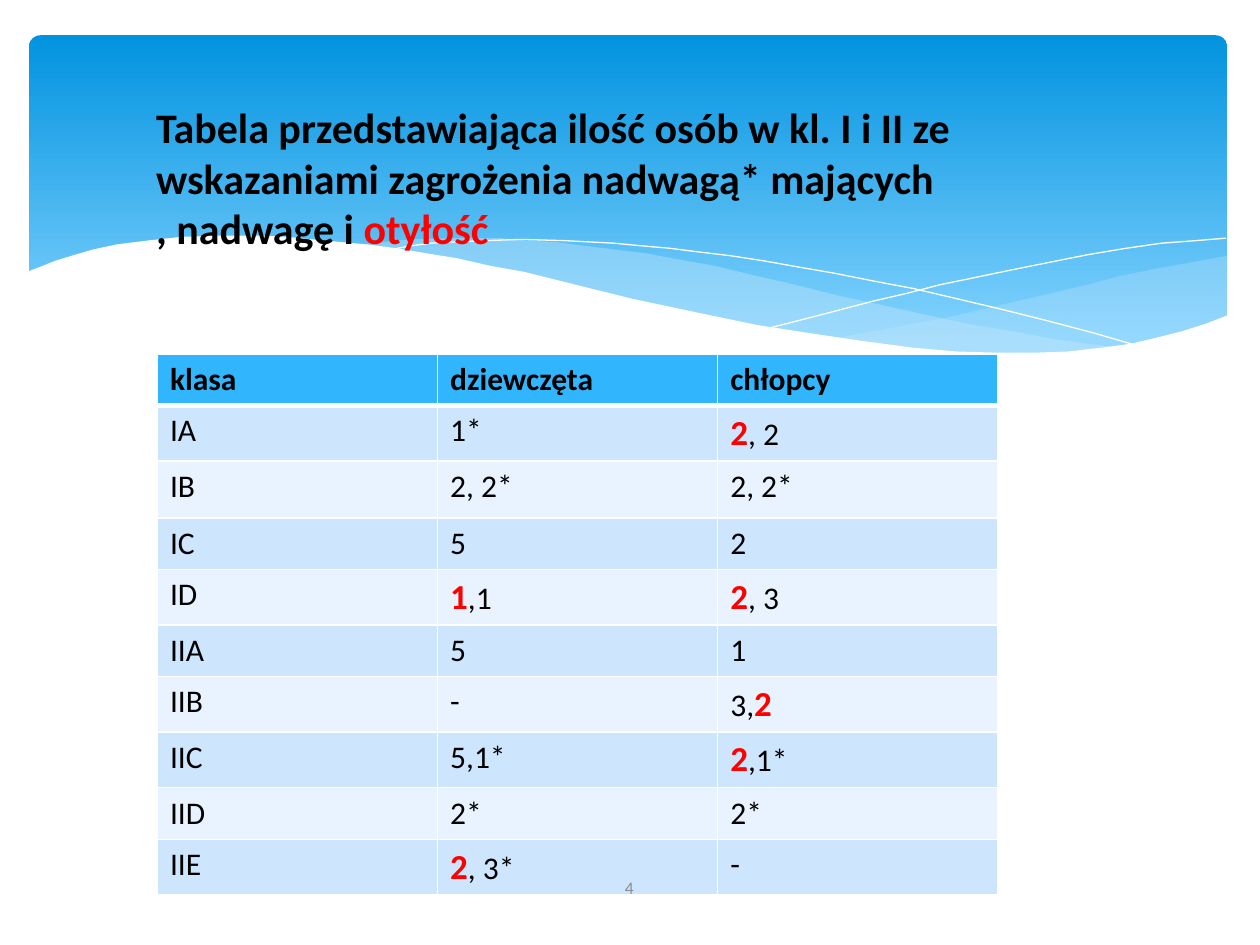
from lxml import etree
from pptx import Presentation
from pptx import util as u
from pptx.dml.color import RGBColor
from pptx.enum import shapes, text
from pptx.oxml.ns import qn

BLACK = RGBColor(0x00, 0x00, 0x00)
WHITE = RGBColor(0xFF, 0xFF, 0xFF)
RED = RGBColor(0xFF, 0x00, 0x00)
GREY = RGBColor(0x8C, 0x8C, 0x8C)
SKY_TOP = RGBColor(0x02, 0x93, 0xE0)
SKY_BOTTOM = RGBColor(0x83, 0xD3, 0xFE)
WAVE = RGBColor(0xC6, 0xE7, 0xFC)
HEADER = RGBColor(0x31, 0xB6, 0xFD)
BANDS = (RGBColor(0xCE, 0xE5, 0xFE), RGBColor(0xE8, 0xF3, 0xFF))
FONT = "Calibri"

RIGHT_WAVE = [
    (9.74, 2.03), (9.47, 2.08), (9.19, 2.13), (8.89, 2.19), (8.59, 2.27),
    (8.03, 2.4), (7.52, 2.52), (7.04, 2.61), (6.6, 2.69), (6.89, 2.73),
    (7.17, 2.76), (7.43, 2.78), (7.67, 2.8), (7.9, 2.81), (8.33, 2.81),
    (8.61, 2.79), (8.87, 2.75), (9.11, 2.71), (9.34, 2.65), (9.61, 2.56),
    (9.74, 2.51),
]
MIDDLE_WAVE = [
    (8.91, 2.76), (8.64, 2.73), (8.35, 2.69), (8.05, 2.63), (7.73, 2.58),
    (7.4, 2.51), (7.04, 2.43), (6.67, 2.35), (6.27, 2.25), (5.96, 2.18),
    (5.67, 2.11), (5.39, 2.06), (5.12, 2.01), (4.87, 1.98), (4.63, 1.95),
    (4.4, 1.92), (4.18, 1.91), (3.97, 1.89), (3.59, 1.89), (3.26, 1.9),
    (2.97, 1.93), (2.85, 1.95), (3.21, 1.99), (3.6, 2.06), (4.02, 2.15),
    (4.48, 2.25), (4.89, 2.35), (5.28, 2.44), (5.65, 2.52), (5.99, 2.59),
    (6.32, 2.65), (6.64, 2.7), (6.93, 2.74), (7.21, 2.77), (7.47, 2.79),
    (7.71, 2.81), (7.94, 2.82), (8.26, 2.82), (8.56, 2.8), (8.74, 2.78),
]
FALLING_LINE = [
    (3.08, 1.99), (3.16, 1.97), (3.27, 1.95), (3.42, 1.93), (3.61, 1.92),
    (3.85, 1.91), (4.14, 1.9), (4.48, 1.91), (4.87, 1.93), (5.08, 1.95),
    (5.31, 1.97), (5.55, 2), (5.8, 2.03), (6.06, 2.07), (6.34, 2.12),
    (6.63, 2.17), (6.93, 2.23), (7.25, 2.29), (7.59, 2.37), (7.93, 2.45),
    (8.29, 2.54), (8.67, 2.64), (9.05, 2.75),
]
RISING_LINE = [
    (6.12, 2.6), (6.51, 2.5), (6.93, 2.39), (7.19, 2.33), (7.46, 2.26),
    (7.75, 2.2), (8.04, 2.14), (8.34, 2.08), (8.64, 2.02), (8.94, 1.97),
    (9.22, 1.93), (9.49, 1.91), (9.73, 1.89),
]
WHITE_WAVE = [
    (9.75, 2.5), (9.57, 2.57), (9.38, 2.63), (9.18, 2.68), (8.97, 2.73),
    (8.74, 2.76), (8.48, 2.79), (8.21, 2.8), (7.92, 2.8), (7.59, 2.79),
    (7.25, 2.76), (6.87, 2.71), (6.46, 2.65), (6.01, 2.58), (5.53, 2.48),
    (5.01, 2.37), (4.45, 2.23), (4.17, 2.16), (3.89, 2.11), (3.63, 2.05),
    (3.38, 2.01), (3.14, 1.97), (2.91, 1.94), (2.69, 1.92), (2.48, 1.9),
    (2.28, 1.88), (2.09, 1.87), (1.75, 1.87), (1.44, 1.88), (1.17, 1.91),
    (0.93, 1.94), (0.74, 1.98), (0.57, 2.03), (0.44, 2.07), (0.34, 2.11),
    (0.21, 2.16), (0.21, 3.33), (9.75, 3.33),
]

# A part between bars is set larger, bold and red.
ROWS = [
    ("klasa", "dziewczęta", "chłopcy"),
    ("IA", "1*", "|2|, 2"),
    ("IB", "2, 2*", "2, 2*"),
    ("IC", "5", "2"),
    ("ID", "|1|,1", "|2|, 3"),
    ("IIA", "5", "1"),
    ("IIB", "-", "3,|2|"),
    ("IIC", "5,1*", "|2|,1*"),
    ("IID", "2*", "2*"),
    ("IIE", "|2|, 3*", "-"),
]
TITLE = [
    "Tabela przedstawiająca ilość osób w kl. I i II ze",
    "wskazaniami zagrożenia nadwagą* mających",
    ", nadwagę i |otyłość|",
]


def add_runs(paragraph, marked_text, size, bold=False, marked_size=None):
    for index, part in enumerate(marked_text.split("|")):
        if not part:
            continue
        marked = index % 2 == 1
        run = paragraph.add_run()
        run.text = part
        run.font.name = FONT
        run.font.size = u.Pt(marked_size if marked and marked_size else size)
        run.font.bold = bold or marked
        run.font.color.rgb = RED if marked else BLACK


def add_banner(slide):
    banner = slide.shapes.add_shape(
        shapes.MSO_SHAPE.ROUNDED_RECTANGLE,
        u.Inches(0.23), u.Inches(0.28), u.Inches(9.51), u.Inches(2.7))
    banner.adjustments[0] = 0.034
    banner.shadow.inherit = False
    banner.line.fill.background()
    banner.fill.gradient()
    banner.fill.gradient_angle = 270
    stops = ((0, SKY_TOP), (0.9, SKY_BOTTOM))
    for stop, (position, color) in zip(banner.fill.gradient_stops, stops):
        stop.position = position
        stop.color.rgb = color


def add_outline(slide, points, closed):
    start, *rest = [(u.Inches(x), u.Inches(y)) for x, y in points]
    builder = slide.shapes.build_freeform(*start)
    builder.add_line_segments(rest, close=closed)
    shape = builder.convert_to_shape()
    shape.shadow.inherit = False
    return shape


def add_wave(slide, points, color, opacity=100):
    wave = add_outline(slide, points, closed=True)
    wave.line.fill.background()
    wave.fill.solid()
    wave.fill.fore_color.rgb = color
    if opacity < 100:
        rgb = wave.fill._xPr.find(qn("a:solidFill")).find(qn("a:srgbClr"))
        etree.SubElement(rgb, qn("a:alpha"), val=str(opacity * 1000))


def add_hairline(slide, points):
    curve = add_outline(slide, points, closed=False)
    curve.fill.background()
    curve.line.color.rgb = WHITE
    curve.line.width = u.Pt(0)


def set_borders(cell, bottom_width):
    """Draw white cell borders; they must precede the fill in the XML."""
    properties = cell._tc.get_or_add_tcPr()
    widths = {"a:lnL": 1, "a:lnR": 1, "a:lnT": 1, "a:lnB": bottom_width}
    for index, (tag, width) in enumerate(widths.items()):
        border = etree.Element(qn(tag), w=str(u.Pt(width)))
        fill = etree.SubElement(border, qn("a:solidFill"))
        etree.SubElement(fill, qn("a:srgbClr"), val=str(WHITE))
        properties.insert(index, border)


def add_class_table(slide):
    table = slide.shapes.add_table(
        len(ROWS), len(ROWS[0]), u.Inches(1.25), u.Inches(2.81),
        u.Inches(6.67), u.Inches(4.14)).table
    for row in table.rows:
        row.height = u.Inches(0.41)
    table.rows[2].height = u.Inches(0.45)
    for row_index, values in enumerate(ROWS):
        is_header = row_index == 0
        for column_index, value in enumerate(values):
            cell = table.cell(row_index, column_index)
            cell.fill.solid()
            cell.fill.fore_color.rgb = HEADER if is_header else BANDS[(row_index - 1) % 2]
            set_borders(cell, 3 if is_header else 1)
            add_runs(cell.text_frame.paragraphs[0], value, 18, is_header, 20)


def add_title(slide):
    frame = slide.shapes.add_textbox(
        u.Inches(1.14), u.Inches(0.76), u.Inches(6.86), u.Inches(1.31)).text_frame
    frame.word_wrap = False
    frame.auto_size = text.MSO_AUTO_SIZE.SHAPE_TO_FIT_TEXT
    for index, line in enumerate(TITLE):
        paragraph = frame.add_paragraph() if index else frame.paragraphs[0]
        add_runs(paragraph, line, 24, bold=True)


def add_page_number(slide):
    frame = slide.shapes.add_textbox(
        u.Inches(4.36), u.Inches(6.84), u.Inches(1.27), u.Inches(0.4)).text_frame
    frame.word_wrap = True
    frame.vertical_anchor = text.MSO_ANCHOR.MIDDLE
    frame.text = "4"
    paragraph = frame.paragraphs[0]
    paragraph.alignment = text.PP_ALIGN.CENTER
    font = paragraph.runs[0].font
    font.name = FONT
    font.size = u.Pt(10)
    font.color.rgb = GREY


def main():
    presentation = Presentation()
    presentation.slide_width = u.Inches(10)
    presentation.slide_height = u.Inches(7.5)
    slide = presentation.slides.add_slide(presentation.slide_layouts[6])
    add_banner(slide)
    add_wave(slide, RIGHT_WAVE, WAVE, opacity=29)
    add_wave(slide, MIDDLE_WAVE, WAVE, opacity=40)
    add_hairline(slide, FALLING_LINE)
    add_hairline(slide, RISING_LINE)
    add_wave(slide, WHITE_WAVE, WHITE)
    add_class_table(slide)
    add_title(slide)
    add_page_number(slide)
    presentation.save("out.pptx")


if __name__ == "__main__":
    main()
